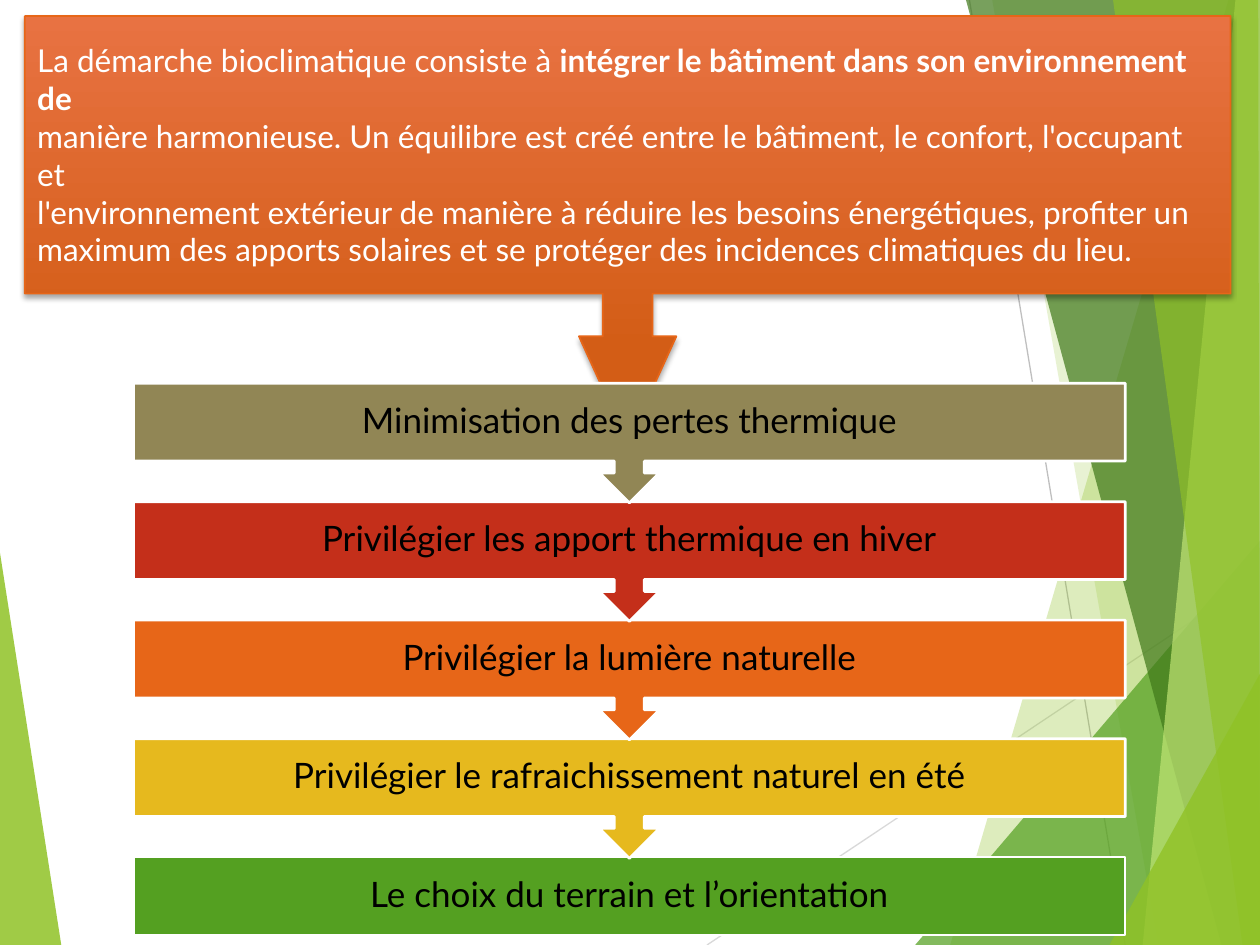
from lxml.etree import SubElement
from pptx import Presentation
from pptx.dml.color import RGBColor
from pptx.enum.shapes import MSO_CONNECTOR, MSO_SHAPE
from pptx.enum.text import MSO_ANCHOR, PP_ALIGN
from pptx.oxml.ns import qn
from pptx.util import Pt

WHITE = RGBColor(0xFF, 0xFF, 0xFF)
BLACK = RGBColor(0x00, 0x00, 0x00)
LIME = RGBColor(0x90, 0xC2, 0x26)
PALE = RGBColor(0xC0, 0xE4, 0x74)
GREEN = RGBColor(0x54, 0xA0, 0x21)
DARK = RGBColor(0x3F, 0x78, 0x19)
LIGHT = RGBColor(0xD9, 0xD9, 0xD9)
GREY = RGBColor(0xBF, 0xBF, 0xBF)
CORAL = RGBColor(0xE8, 0x72, 0x42)
RUST = RGBColor(0xD3, 0x5D, 0x16)
ORANGE = RGBColor(0xE7, 0x66, 0x18)
OLIVE = RGBColor(0x91, 0x86, 0x55)
RED = RGBColor(0xC4, 0x2F, 0x1A)
GOLD = RGBColor(0xE6, 0xB9, 0x1E)

WIDE, HIGH = 720, 540

# Background facets: colour, opacity in percent, corner points
LEFT_FACET = (LIME, 85, [(0, 316), (35, 540), (0, 540)])
RIGHT_FACETS = [
    (LIME, 30, [(702, 0), (543, 540), (720, 540), (720, 0)]),
    (LIME, 20, [(567, 0), (662, 540), (720, 540), (720, 0)]),
    (GREEN, 72, [(523, 540), (720, 309), (720, 540)]),
    (DARK, 70, [(552, 0), (698, 540), (720, 540), (720, 0)]),
    (PALE, 70, [(706, 0), (653, 540), (720, 540), (720, 0)]),
    (LIME, 65, [(636, 0), (710, 540), (720, 540), (719, 0)]),
    (LIME, 80, [(634, 540), (720, 385), (720, 540)]),
]
RAYS = [(LIGHT, 404, 540, 720, 329), (GREY, 554, 0, 643, 540)]

INTRO = [
    [("La démarche bioclimatique consiste à ", False),
     ("intégrer le bâtiment dans son environnement de", True)],
    [("manière harmonieuse. Un équilibre est créé entre le bâtiment, "
      "le confort, l'occupant et", False)],
    [("l'environnement extérieur de manière à réduire les besoins "
      "énergétiques, profiter un", False)],
    [("maximum des apports solaires et se protéger des incidences "
      "climatiques du lieu.", False)],
]
STEPS = [
    ("Minimisation des pertes thermique", OLIVE),
    ("Privilégier les apport thermique en hiver", RED),
    ("Privilégier la lumière naturelle", ORANGE),
    ("Privilégier le rafraichissement naturel en été", GOLD),
    ("Le choix du terrain et l’orientation", GREEN),
]
STEP_X, STEP_Y, STEP_W, STEP_H = 76.3, 219, 566.7, 44.5
PITCH, CALL_H = 67.7, 68.4


def apply(item, form):
    for name, value in form.items():
        setattr(item, name, value)


class Deck:
    font = "Lato"

    def __init__(self, slide):
        self.slide = slide
        self.shapes = slide.shapes

    def paint(self, shape, color, edge=None, width=0):
        shape.shadow.inherit = False
        if color is not None:
            shape.fill.solid()
            shape.fill.fore_color.rgb = color
        if edge is None:
            shape.line.fill.background()
        else:
            shape.line.color.rgb = edge
            shape.line.width = Pt(width)

    def facet(self, color, alpha, points):
        pen = self.shapes.build_freeform(*points[0], scale=Pt(1))
        pen.add_line_segments(points[1:], close=True)
        shape = pen.convert_to_shape()
        self.paint(shape, color)
        tint = shape._element.spPr.find(qn("a:solidFill"))[0]
        SubElement(tint, qn("a:alpha"), val=str(alpha * 1000))

    def ray(self, color, *ends):
        line = self.shapes.add_connector(MSO_CONNECTOR.STRAIGHT, *map(Pt, ends))
        line.line.color.rgb = color
        line.line.width = Pt(0.75)
        SubElement(line._element.spPr, qn("a:effectLst"))

    def box(self, kind, place, adjust=()):
        shape = self.shapes.add_shape(kind, *map(Pt, place))
        for i, value in enumerate(adjust):
            shape.adjustments[i] = value
        return shape

    def label(self, shape, paras, size, color, align, inset=None, space=1.0):
        frame = shape.text_frame
        apply(frame, {"word_wrap": True, "vertical_anchor": MSO_ANCHOR.MIDDLE})
        if inset is not None:
            sides = ("left", "top", "right", "bottom")
            apply(frame, {f"margin_{side}": Pt(inset) for side in sides})
        for i, runs in enumerate(paras):
            para = frame.add_paragraph() if i else frame.paragraphs[0]
            apply(para, {"alignment": align, "line_spacing": space})
            for text, bold in runs:
                run = para.add_run()
                run.text = text
                apply(run.font, {"name": self.font, "size": Pt(size), "bold": bold})
                run.font.color.rgb = color

    def intro(self, paras):
        shape = self.box(MSO_SHAPE.DOWN_ARROW_CALLOUT, (14.2, 9.2, 689, 244),
                         (0.116, 0.114, 0.25, 0.65))
        self.paint(shape, None, ORANGE, 1)
        shape.fill.gradient()
        shape.fill.gradient_angle = 270
        for stop, color, spot in zip(shape.fill.gradient_stops,
                                     (CORAL, RUST), (0, 0.78)):
            stop.color.rgb = color
            stop.position = spot
        # Soft shadow below the box
        glow = SubElement(shape._element.spPr.find(qn("a:effectLst")),
                          qn("a:outerShdw"), blurRad=str(Pt(3)),
                          dist=str(Pt(2)), dir="5400000", rotWithShape="0")
        tint = SubElement(glow, qn("a:srgbClr"), val=str(BLACK))
        SubElement(tint, qn("a:alpha"), val="35000")
        self.label(shape, paras, 18, WHITE, PP_ALIGN.LEFT)

    def step(self, text, color, top, last):
        if last:
            shape = self.box(MSO_SHAPE.RECTANGLE, (STEP_X, top, STEP_W, STEP_H))
        else:
            shape = self.box(MSO_SHAPE.DOWN_ARROW_CALLOUT,
                             (STEP_X, top, STEP_W, CALL_H),
                             (0.25, 0.25, 0.25, 0.65))
        self.paint(shape, color, WHITE, 1.5)
        self.label(shape, [[(text, False)]], 20, BLACK, PP_ALIGN.CENTER, 11.5, 0.9)


def main():
    show = Presentation()
    apply(show, {"slide_width": Pt(WIDE), "slide_height": Pt(HIGH)})
    deck = Deck(show.slides.add_slide(show.slide_layouts[6]))

    # Background
    deck.facet(*LEFT_FACET)
    for ray in RAYS:
        deck.ray(*ray)
    for facet in RIGHT_FACETS:
        deck.facet(*facet)

    # Introduction
    deck.intro(INTRO)

    # Chain of steps, drawn from the last one up
    final = len(STEPS) - 1
    for i, (text, color) in reversed(list(enumerate(STEPS))):
        deck.step(text, color, STEP_Y + i * PITCH, i == final)

    show.save("out.pptx")


if __name__ == "__main__":
    main()
